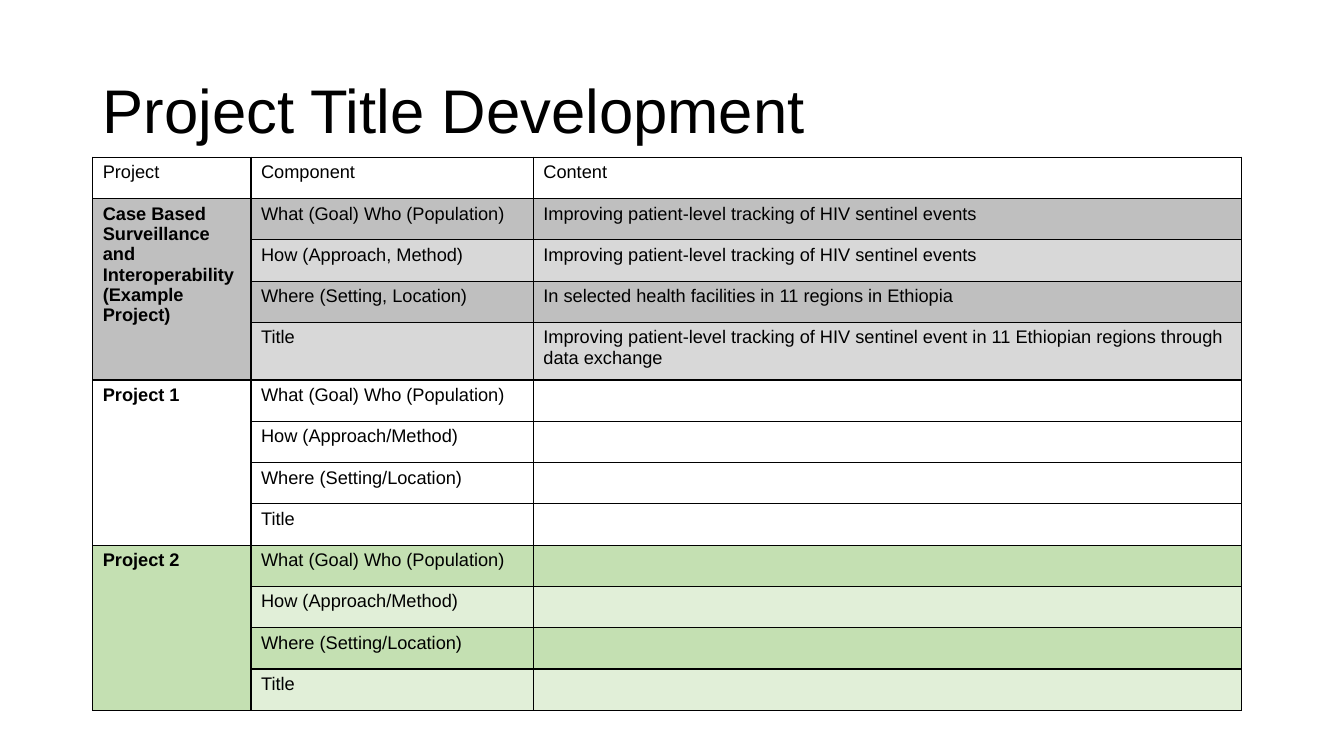
"""Build the Project Title Development slide."""
from lxml.etree import SubElement as Sub
from pptx import Presentation
from pptx.dml.color import RGBColor as RGB
from pptx.enum.text import MSO_ANCHOR as Anchor, MSO_AUTO_SIZE as Fit, PP_ALIGN as Align
from pptx.oxml.ns import qn
from pptx.util import Inches, Pt

BLACK = RGB(0, 0, 0)
GREYS = (RGB(0xBF, 0xBF, 0xBF), RGB(0xD8, 0xD8, 0xD8))
GREENS = (RGB(0xC4, 0xE0, 0xB2), RGB(0xE1, 0xEF, 0xD8))
FONT = "Arial"

TITLE = "Project Title Development"
HEAD = ("Project", "Component", "Content")
PARTS = ("What (Goal) Who (Population)", "How (Approach/Method)",
         "Where (Setting/Location)", "Title")
SAMPLE = ("What (Goal) Who (Population)", "How (Approach, Method)",
          "Where (Setting, Location)", "Title")
EVENTS = "Improving patient-level tracking of HIV sentinel events"
ANSWERS = (EVENTS, EVENTS, "In selected health facilities in 11 regions in Ethiopia",
           "Improving patient-level tracking of HIV sentinel event in 11 "
           "Ethiopian regions through data exchange")
BLANK = ("",) * len(PARTS)
GROUPS = (
    ("Case Based Surveillance and Interoperability (Example Project)",
     SAMPLE, ANSWERS, GREYS),
    ("Project 1", PARTS, BLANK, None),
    ("Project 2", PARTS, BLANK, GREENS),
)
LEFT, TOP = 0.92, 1.56
COLS = (1.57, 2.8, 7.02)
ROW, TALL = 0.41, 0.57
SPAN = len(PARTS)
ROWS = 1 + SPAN * len(GROUPS)


def style(para, size, bold=False):
    """Set the font of a paragraph."""
    font = para.font
    font.name, font.size, font.bold = FONT, Pt(size), bold
    font.color.rgb = BLACK


def fill_cell(cell, text, color, bold=False):
    """Give a cell its borders, fill and text."""
    props = cell._tc.get_or_add_tcPr()
    for side in ("a:lnL", "a:lnR", "a:lnT", "a:lnB"):
        line = Sub(props, qn(side), w=str(Pt(1)))
        Sub(Sub(line, qn("a:solidFill")), qn("a:srgbClr"), val=str(BLACK))
    if color is None:
        cell.fill.background()
    else:
        cell.fill.solid()
        cell.fill.fore_color.rgb = color
    cell.text = text
    style(cell.text_frame.paragraphs[0], 13, bold)


def add_title(slide):
    """Place and format the title."""
    title = slide.shapes.title
    title.left, title.top = Inches(LEFT), Inches(0.4)
    title.width, title.height = Inches(11.5), Inches(1.45)
    frame = title.text_frame
    frame.text = TITLE
    frame.auto_size, frame.vertical_anchor = Fit.NONE, Anchor.MIDDLE
    para = frame.paragraphs[0]
    para.alignment, para.line_spacing = Align.LEFT, 0.9
    style(para, 44)


def add_grid(slide):
    """Add the table of projects."""
    high = ROW * (ROWS - 1) + TALL
    table = slide.shapes.add_table(
        ROWS, len(COLS), Inches(LEFT), Inches(TOP),
        Inches(sum(COLS)), Inches(high)).table
    table.first_row = table.horz_banding = False
    for col, wide in zip(table.columns, COLS):
        col.width = Inches(wide)
    for row in table.rows:
        row.height = Inches(ROW)
    table.rows[SPAN].height = Inches(TALL)
    for col, text in enumerate(HEAD):
        fill_cell(table.cell(0, col), text, None)
    for group, (name, parts, answers, tones) in enumerate(GROUPS):
        first = 1 + group * SPAN
        for step, (part, answer) in enumerate(zip(parts, answers)):
            tone = tones[step % 2] if tones else None
            fill_cell(table.cell(first + step, 0), "" if step else name,
                      tones[0] if tones else None, True)
            fill_cell(table.cell(first + step, 1), part, tone)
            fill_cell(table.cell(first + step, 2), answer, tone)
        table.cell(first, 0).merge(table.cell(first + SPAN - 1, 0))


def main():
    """Make and save the deck."""
    deck = Presentation()
    deck.slide_width, deck.slide_height = Inches(13.33), Inches(7.5)
    slide = deck.slides.add_slide(deck.slide_layouts[5])
    add_title(slide)
    add_grid(slide)
    deck.save("out.pptx")


if __name__ == "__main__":
    main()
